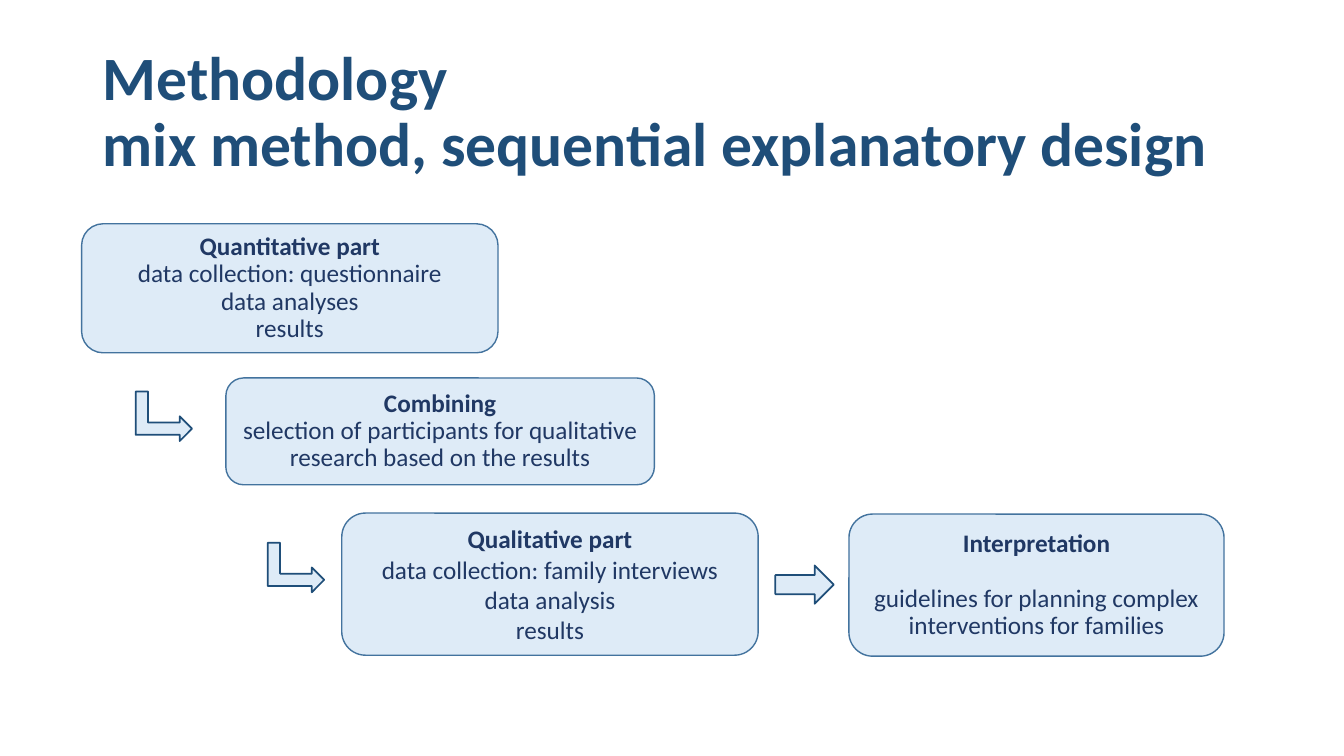
from dataclasses import dataclass

from pptx import Presentation
from pptx.dml.color import RGBColor
from pptx.enum.shapes import MSO_SHAPE as Preset
from pptx.enum.text import MSO_ANCHOR as Anchor, MSO_AUTO_SIZE as AutoSize, PP_ALIGN as Align
from pptx.shapes.autoshape import Shape
from pptx.slide import Slide
from pptx.text.text import _Paragraph as Paragraph
from pptx.util import Emu, Pt

EMU_PER_PX = 9144
TITLE_ONLY_LAYOUT = 5
FONT = "Calibri"
PALE_BLUE = RGBColor(0xDE, 0xEB, 0xF7)
BORDER_BLUE = RGBColor(0x43, 0x73, 0x9E)
DARK_BLUE = RGBColor(0x1F, 0x4E, 0x79)
NAVY = RGBColor(0x20, 0x38, 0x64)


@dataclass(frozen=True)
class Area:
    left: int
    top: int
    width: int
    height: int

    def emu(self) -> tuple[Emu, Emu, Emu, Emu]:
        return px(self.left), px(self.top), px(self.width), px(self.height)


@dataclass(frozen=True)
class Stage:
    area: Area
    heading: str
    details: tuple[str, ...]
    line_spacing: float = 0.9
    heading_gap: int = 0


@dataclass(frozen=True)
class Arrow:
    area: Area
    preset: Preset
    rotation: int = 0


TITLE_AREA = Area(92, 40, 1150, 145)
TITLE = "Methodology\vmix method, sequential explanatory design"

STAGES = (
    Stage(Area(81, 222, 413, 128), "Quantitative part",
          ("data collection: questionnaire", "data analyses", "results")),
    Stage(Area(224, 375, 425, 106), "Combining",
          ("selection of participants for qualitative research based on the results",)),
    Stage(Area(339, 509, 413, 141), "Qualitative part",
          ("data collection: family interviews", "data analysis", "results"),
          line_spacing=1.0),
    Stage(Area(842, 510, 372, 141), "Interpretation",
          ("guidelines for planning complex interventions for families",),
          heading_gap=20),
)

ARROWS = (
    Arrow(Area(138, 385, 49, 56), Preset.BENT_UP_ARROW, 90),
    Arrow(Area(269, 535, 49, 56), Preset.BENT_UP_ARROW, 90),
    Arrow(Area(769, 561, 58, 38), Preset.RIGHT_ARROW),
)


def px(length: int) -> Emu:
    return Emu(length * EMU_PER_PX)


def format_paragraph(para: Paragraph, size: int, color: RGBColor, bold: bool,
                     align: Align, line_spacing: float) -> None:
    para.alignment = align
    para.line_spacing = line_spacing
    for span in para.runs:
        span.font.name = FONT
        span.font.size = Pt(size)
        span.font.bold = bold
        span.font.color.rgb = color


def add_title(page: Slide) -> None:
    title = page.shapes.title
    title.left, title.top, title.width, title.height = TITLE_AREA.emu()
    frame = title.text_frame
    frame.text = TITLE
    frame.word_wrap = True
    frame.auto_size = AutoSize.NONE
    frame.vertical_anchor = Anchor.MIDDLE
    format_paragraph(frame.paragraphs[0], 44, DARK_BLUE, True, Align.LEFT, 0.9)


def add_preset(page: Slide, preset: Preset, area: Area,
               border: RGBColor, border_width: float) -> Shape:
    shape = page.shapes.add_shape(preset, *area.emu())
    shape.shadow.inherit = False
    shape.fill.solid()
    shape.fill.fore_color.rgb = PALE_BLUE
    shape.line.color.rgb = border
    shape.line.width = Pt(border_width)
    return shape


def add_stage(page: Slide, stage: Stage) -> None:
    box = add_preset(page, Preset.ROUNDED_RECTANGLE, stage.area, BORDER_BLUE, 1)
    frame = box.text_frame
    frame.text = "\n".join((stage.heading, *stage.details))
    frame.word_wrap = True
    frame.vertical_anchor = Anchor.MIDDLE
    for index, para in enumerate(frame.paragraphs):
        format_paragraph(para, 18, NAVY, index == 0, Align.CENTER, stage.line_spacing)
    frame.paragraphs[0].space_after = Pt(stage.heading_gap)


def add_arrow(page: Slide, arrow: Arrow) -> None:
    shape = add_preset(page, arrow.preset, arrow.area, DARK_BLUE, 1.25)
    shape.rotation = arrow.rotation


def main() -> None:
    deck = Presentation()
    deck.slide_width, deck.slide_height = px(1333), px(750)
    page = deck.slides.add_slide(deck.slide_layouts[TITLE_ONLY_LAYOUT])
    add_title(page)
    for stage in STAGES:
        add_stage(page, stage)
    for arrow in ARROWS:
        add_arrow(page, arrow)
    deck.save("out.pptx")


if __name__ == "__main__":
    main()
